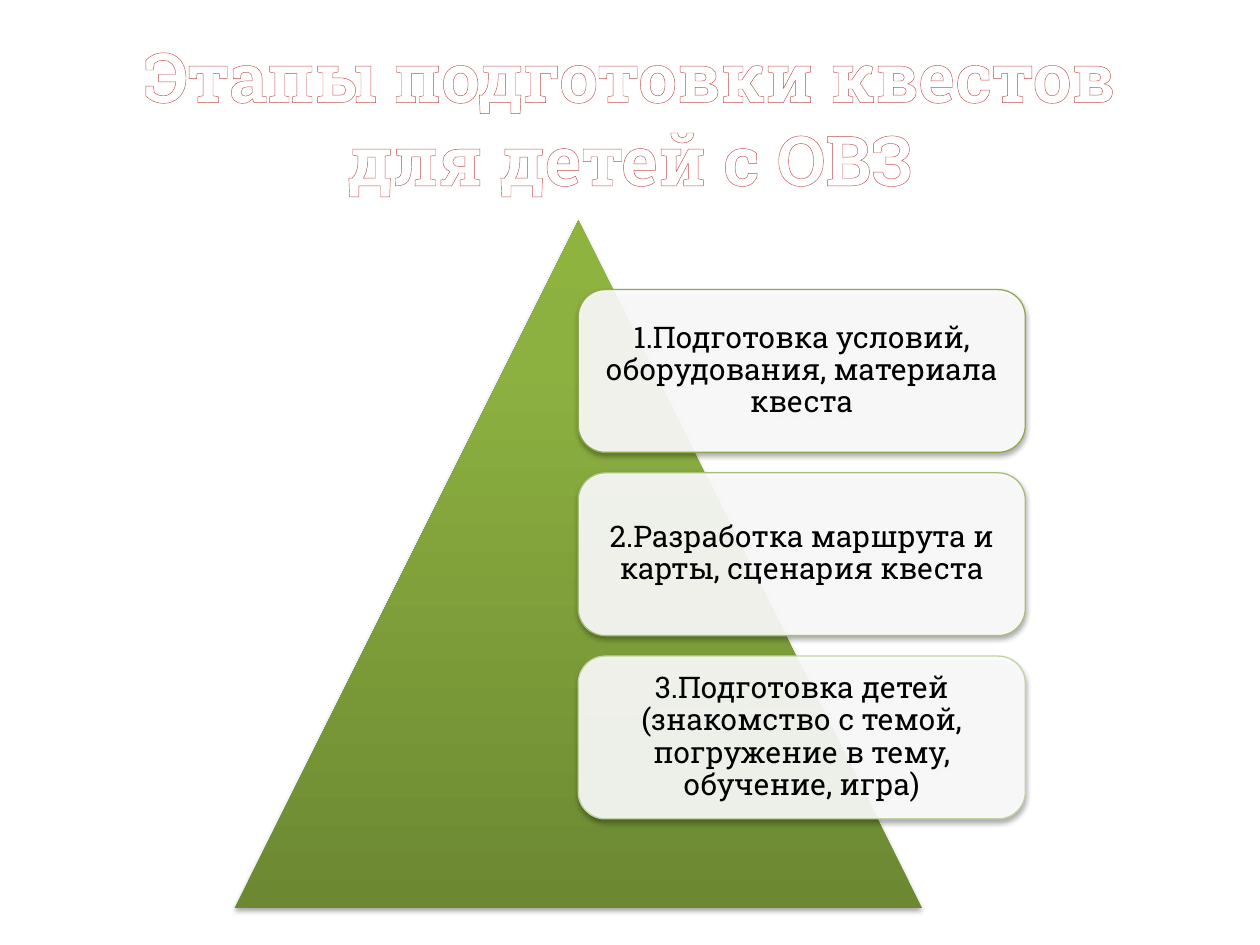
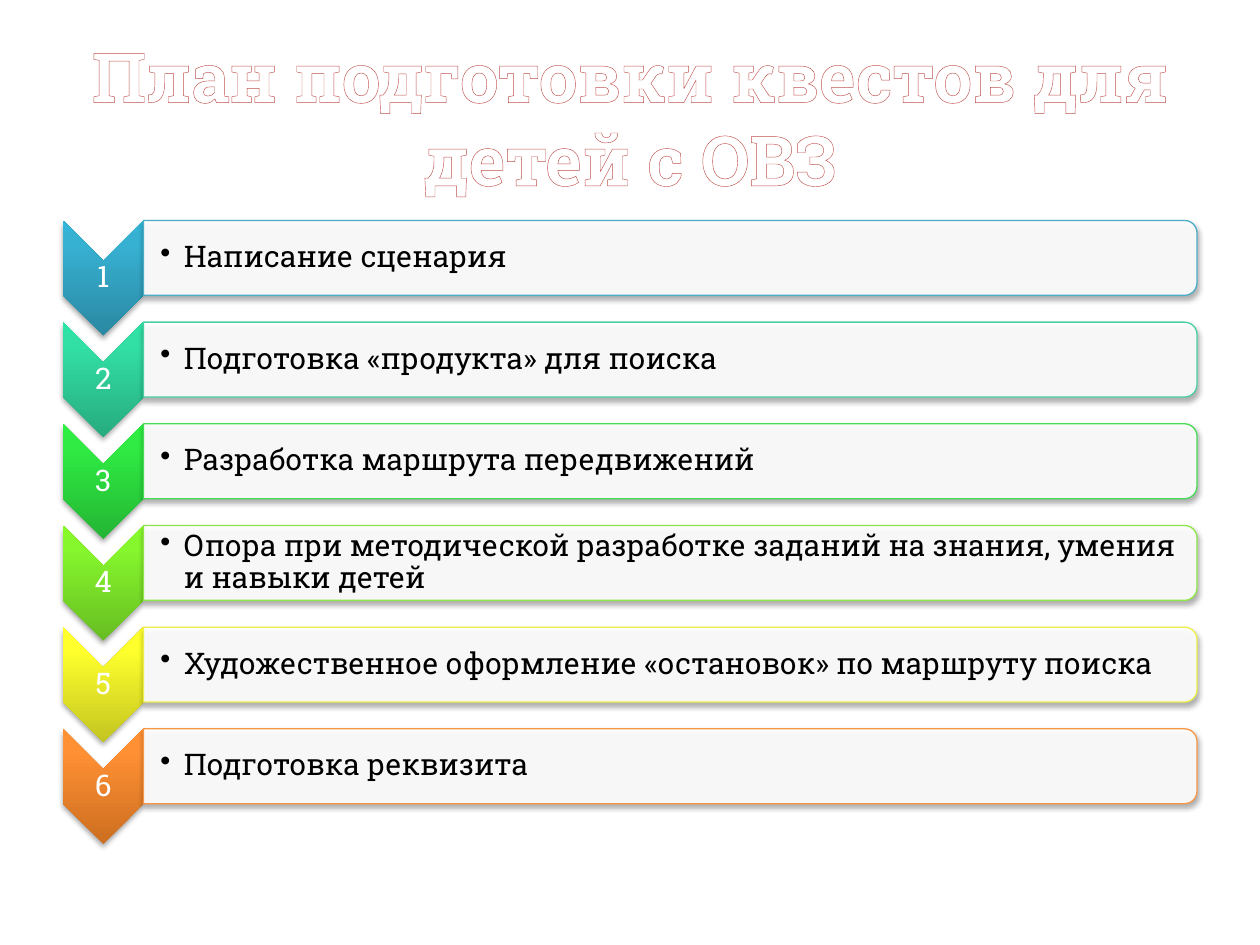
"""Build two slides on preparing quests: a pyramid of stages and a six-step plan."""
from lxml import etree
from pptx import Presentation
from pptx import oxml
from pptx.dml import color
from pptx.enum import shapes, text
from pptx.oxml import ns
from pptx.util import Pt

FONT = "Roboto Slab"
WHITE, BLACK, TITLE_OUTLINE = "FFFFFF", "000000", "C0504D"
STAGES = [
    ("1.Подготовка условий, оборудования, материала квеста", "8DAA51"),
    ("2.Разработка маршрута и карты, сценария квеста", "A6BF7A"),
    ("3.Подготовка детей (знакомство с темой, погружение в тему, обучение, игра)", "C1D3A5"),
]
STEPS = [
    ("Написание сценария", "4BACC6", ("2A88A2", "37B1D2", "34B4D6")),
    ("Подготовка «продукта» для поиска", "49D1A3", ("27AB7E", "32DFA4", "2FE3A6")),
    ("Разработка маршрута передвижений", "47DC57", ("24B534", "2FEB43", "2CEF41")),
    ("Опора при методической разработке заданий на знания, умения и навыки детей",
     "8DE646", ("67BD22", "86F62D", "86FB29")),
    ("Художественное оформление «остановок» по маршруту поиска",
     "EEEF46", ("C4C521", "FEFF2C", "FEFF2D")),
    ("Подготовка реквизита", "F79646", ("CC6E20", "FF9034", "FF9136")),
]
rgb = color.RGBColor.from_string


def add_block(slide, preset, left, top, width, height, border=None, gradient=None, turned=False):
    """Add a shadowed shape that covers the given area, turned by 90 degrees if asked."""
    if turned:
        left, top = left + (width - height) / 2, top + (height - width) / 2
        width, height = height, width
    block = slide.shapes.add_shape(preset, Pt(left), Pt(top), Pt(width), Pt(height))
    block.rotation = 90 if turned else 0
    block.fill.solid()
    block.fill.fore_color.rgb = rgb(WHITE)
    solid = block._element.spPr.find(ns.qn("a:solidFill"))
    if gradient:
        stops = "".join(f'<a:gs pos="{place}"><a:srgbClr val="{tone}"/></a:gs>'
                        for place, tone in zip((0, 80000, 100000), gradient))
        block._element.spPr.replace(solid, oxml.parse_xml(
            f'<a:gradFill {ns.nsdecls("a")} rotWithShape="0"><a:gsLst>{stops}</a:gsLst>'
            '<a:lin ang="16200000" scaled="0"/></a:gradFill>'))
    else:
        etree.SubElement(solid[0], ns.qn("a:alpha"), val="90000")
    if border:
        block.line.color.rgb = rgb(border)
        block.line.width = Pt(0.75)
    else:
        block.line.fill.background()
    block.shadow.inherit = False
    block._element.spPr.find(ns.qn("a:effectLst")).append(oxml.parse_xml(
        f'<a:outerShdw {ns.nsdecls("a")} blurRad="{Pt(3.1)}" dist="{Pt(1.8)}" dir="5400000" '
        f'rotWithShape="0"><a:srgbClr val="{BLACK}"><a:alpha val="35000"/></a:srgbClr></a:outerShdw>'))
    return block


def write(holder, words, tone, inset, left_inset=None, bullet=False):
    """Put one formatted paragraph, centred or bulleted, into a shape or text box."""
    frame = holder.text_frame
    frame.word_wrap = True
    frame.vertical_anchor = text.MSO_ANCHOR.MIDDLE
    frame.margin_left = Pt(left_inset or inset)
    frame.margin_right = frame.margin_top = frame.margin_bottom = Pt(inset)
    paragraph = frame.paragraphs[0]
    paragraph.text = words
    paragraph.line_spacing = 0.9
    paragraph.alignment = text.PP_ALIGN.LEFT if bullet else text.PP_ALIGN.CENTER
    if bullet:
        properties = paragraph._p.get_or_add_pPr()
        properties.set("marL", str(Pt(13.5)))
        properties.set("indent", str(-Pt(13.5)))
        etree.SubElement(properties, ns.qn("a:buChar"), char="•")
    paragraph.font.name = FONT
    paragraph.font.size = Pt(17)
    paragraph.font.color.rgb = rgb(tone)


deck = Presentation()
deck.slide_width, deck.slide_height = Pt(720), Pt(540)

pages = []
for heading in ("Этапы подготовки квестов для детей с ОВЗ", "План подготовки квестов для детей с ОВЗ"):
    page = deck.slides.add_slide(deck.slide_layouts[5])
    title = page.shapes.title
    title.left, title.top, title.width, title.height = Pt(36), Pt(21.6), Pt(648), Pt(90)
    title.text_frame.vertical_anchor = text.MSO_ANCHOR.MIDDLE
    title.text_frame.text = heading
    paragraph = title.text_frame.paragraphs[0]
    paragraph.alignment = text.PP_ALIGN.CENTER
    letters = paragraph.runs[0]
    letters.font.name = FONT
    letters.font.size = Pt(39.6)
    letters.font.bold = True
    letters.font.color.rgb = rgb(WHITE)
    letters._r.get_or_add_rPr().insert(0, oxml.parse_xml(
        f'<a:ln {ns.nsdecls("a")} w="{Pt(0.52)}"><a:solidFill><a:srgbClr val="{TITLE_OUTLINE}"/>'
        '</a:solidFill></a:ln>'))
    pages.append(page)
stages_page, plan_page = pages

add_block(stages_page, shapes.MSO_SHAPE.ISOSCELES_TRIANGLE, 134, 126, 393, 393,
          gradient=("6C8932", "8DB141", "8EB43F"))
for row, (stage, border) in enumerate(STAGES):
    card = add_block(stages_page, shapes.MSO_SHAPE.ROUNDED_RECTANGLE,
                     330.4, 165.5 + row * 104.7, 255.5, 93, border)
    write(card, stage, BLACK, 5)

for row, (step, border, gradient) in enumerate(STEPS):
    top = 126 + row * 58.1
    add_block(plan_page, shapes.MSO_SHAPE.CHEVRON, 36, top, 46, 65.8, gradient=gradient, turned=True)
    number = plan_page.shapes.add_textbox(Pt(36), Pt(top + 23), Pt(46), Pt(19.7))
    write(number, str(row + 1), WHITE, 0.8)
    add_block(plan_page, shapes.MSO_SHAPE.ROUND_2_SAME_RECTANGLE, 82, top, 602, 42.8, border, turned=True)
    label = plan_page.shapes.add_textbox(Pt(82), Pt(top + 2.1), Pt(600), Pt(38.6))
    write(label, step, BLACK, 0.8, 9.6, bullet=True)

deck.save("out.pptx")
